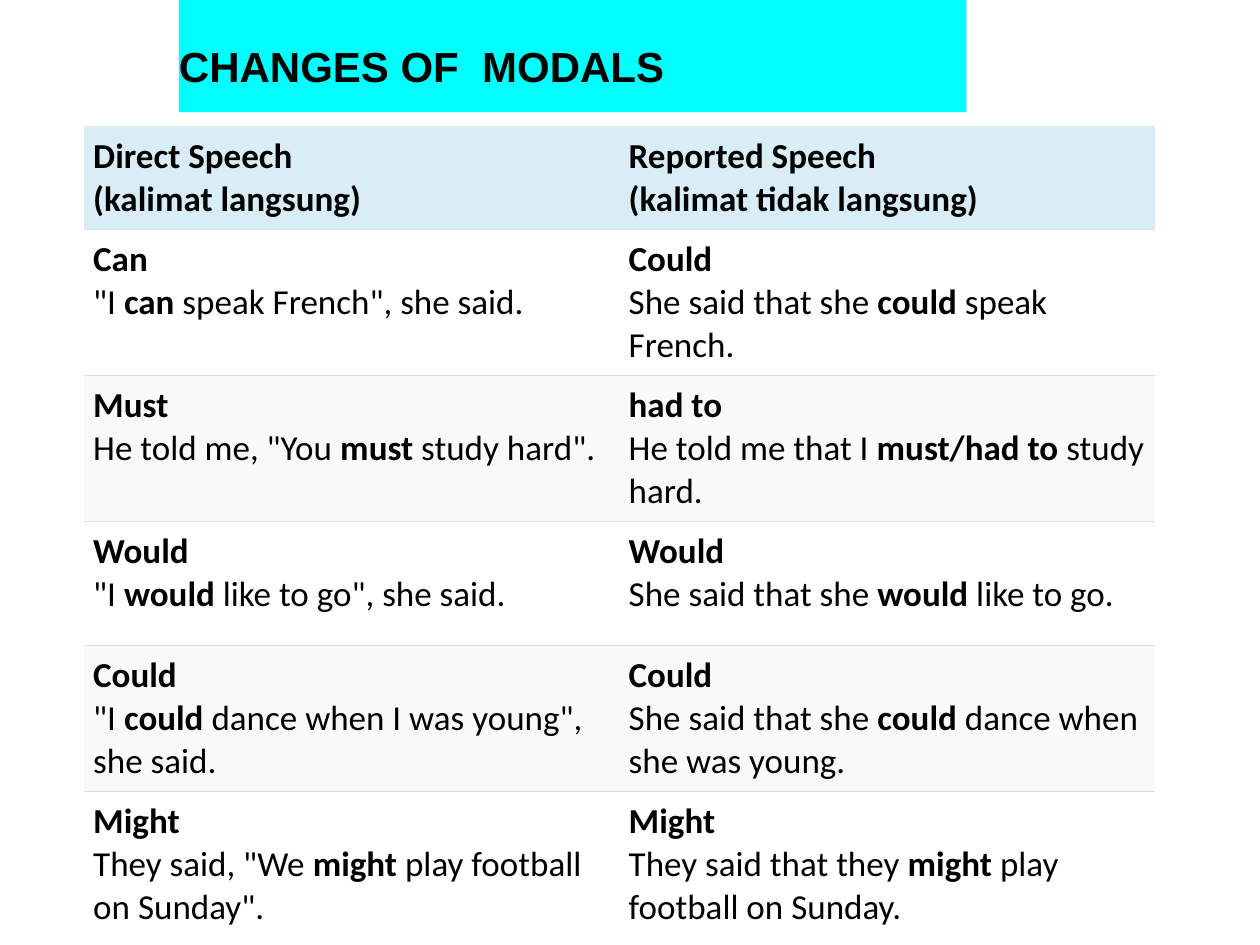
import pptx
import pptx.dml.color
import pptx.enum.text
import pptx.oxml
import pptx.oxml.ns
import pptx.util
from dataclasses import dataclass

Inches = pptx.util.Inches
Anchor = pptx.enum.text.MSO_ANCHOR


@dataclass(frozen=True)
class Theme:
    banner: str = "00FFFF"
    header: str = "D9EDF7"
    bands: tuple = ("FFFFFF", "F9F9F9")
    rule: str = "DDDDDD"
    text: str = "000000"
    title_font: str = "Arial"
    table_font: str = "Calibri"
    title_size: int = 24
    table_size: int = 20
    rule_width: float = 0.75


THEME = Theme()
SLIDE_WIDTH, SLIDE_HEIGHT = 10, 7.5
COLUMN_WIDTH = 0.425 * SLIDE_WIDTH
HEADER_HEIGHT, ROW_HEIGHT = 0.7, 0.98
CELL_MARGIN = 0.07
PLAIN_TABLE_STYLE = "{2D5ABB26-0587-4C30-8999-92F81FD0307C}"

# Each cell is a heading and a sentence; asterisks enclose the bold words
HEADINGS = [
    ("Direct Speech", "*(kalimat langsung)*"),
    ("Reported Speech", "*(kalimat tidak langsung)*"),
]
MODALS = [
    [("Can", '"I *can* speak French", she said.'),
     ("Could", "She said that she *could* speak French.")],
    [("Must", 'He told me, "You *must* study hard".'),
     ("had to", "He told me that I *must/had to* study hard.")],
    [("Would", '"I *would* like to go", she said.'),
     ("Would", "She said that she *would* like to go.")],
    [("Could", '"I *could* dance when I was young", she said.'),
     ("Could", "She said that she *could* dance when she was young.")],
    [("Might", 'They said, "We *might* play football on Sunday".'),
     ("Might", "They said that they *might* play football on Sunday.")],
]


def color(value):
    return pptx.dml.color.RGBColor.from_string(value)


def set_fill(target, value):
    target.fill.solid()
    target.fill.fore_color.rgb = color(value)


def add_text(paragraph, text, font=THEME.table_font, size=THEME.table_size, bold=True):
    run = paragraph.add_run()
    run.text = text
    run.font.name = font
    run.font.size = pptx.util.Pt(size)
    run.font.bold = bold
    run.font.color.rgb = color(THEME.text)


def add_bottom_rule(cell):
    width = pptx.util.Pt(THEME.rule_width)
    cell._tc.get_or_add_tcPr().append(pptx.oxml.parse_xml(
        f'<a:lnB {pptx.oxml.ns.nsdecls("a")} w="{width}"><a:solidFill>'
        f'<a:srgbClr val="{THEME.rule}"/></a:solidFill></a:lnB>'))


def fill_cell(cell, content, background, anchor, ruled):
    heading, sentence = content
    cell.margin_left = cell.margin_right = Inches(CELL_MARGIN)
    cell.margin_top = cell.margin_bottom = Inches(CELL_MARGIN)
    cell.vertical_anchor = anchor
    if ruled:
        add_bottom_rule(cell)
    set_fill(cell, background)
    paragraph = cell.text_frame.paragraphs[0]
    add_text(paragraph, heading)
    paragraph.add_line_break()
    for index, part in enumerate(sentence.split("*")):
        if part:
            add_text(paragraph, part, bold=index % 2 == 1)


def add_modal_table(slide, left, top):
    rows = [HEADINGS] + MODALS
    height = HEADER_HEIGHT + ROW_HEIGHT * len(MODALS)
    shape = slide.shapes.add_table(
        len(rows), len(HEADINGS), Inches(left), Inches(top),
        Inches(COLUMN_WIDTH * len(HEADINGS)), Inches(height))
    table = shape.table
    table.first_row = table.horz_banding = False
    table._tbl.tblPr.find(pptx.oxml.ns.qn("a:tableStyleId")).text = PLAIN_TABLE_STYLE
    for row_index, contents in enumerate(rows):
        is_header = row_index == 0
        table.rows[row_index].height = Inches(HEADER_HEIGHT if is_header else ROW_HEIGHT)
        background = THEME.header if is_header else THEME.bands[(row_index - 1) % 2]
        anchor = Anchor.MIDDLE if is_header else Anchor.TOP
        for column_index, content in enumerate(contents):
            fill_cell(table.cell(row_index, column_index), content, background,
                      anchor, ruled=row_index < len(rows) - 1)


def format_title(slide, text, left, top, width, height):
    title = slide.shapes.title
    title.left, title.top = Inches(left), Inches(top)
    title.width, title.height = Inches(width), Inches(height)
    set_fill(title, THEME.banner)
    frame = title.text_frame
    frame.auto_size = pptx.enum.text.MSO_AUTO_SIZE.NONE
    frame.word_wrap = True
    frame.vertical_anchor = Anchor.BOTTOM
    frame.margin_left = frame.margin_right = 0
    frame.margin_bottom = Inches(0.17)
    paragraph = frame.paragraphs[0]
    paragraph.alignment = pptx.enum.text.PP_ALIGN.LEFT
    add_text(paragraph, text, font=THEME.title_font, size=THEME.title_size)


def main():
    presentation = pptx.Presentation()
    presentation.slide_width = Inches(SLIDE_WIDTH)
    presentation.slide_height = Inches(SLIDE_HEIGHT)
    slide = presentation.slides.add_slide(presentation.slide_layouts[5])

    # Table of modals, then the banner that bleeds off the top edge
    add_modal_table(slide, left=0.67, top=1)
    format_title(slide, "CHANGES OF  MODALS", left=1.42, top=-0.17, width=6.25, height=1.06)

    presentation.save("out.pptx")


if __name__ == "__main__":
    main()
